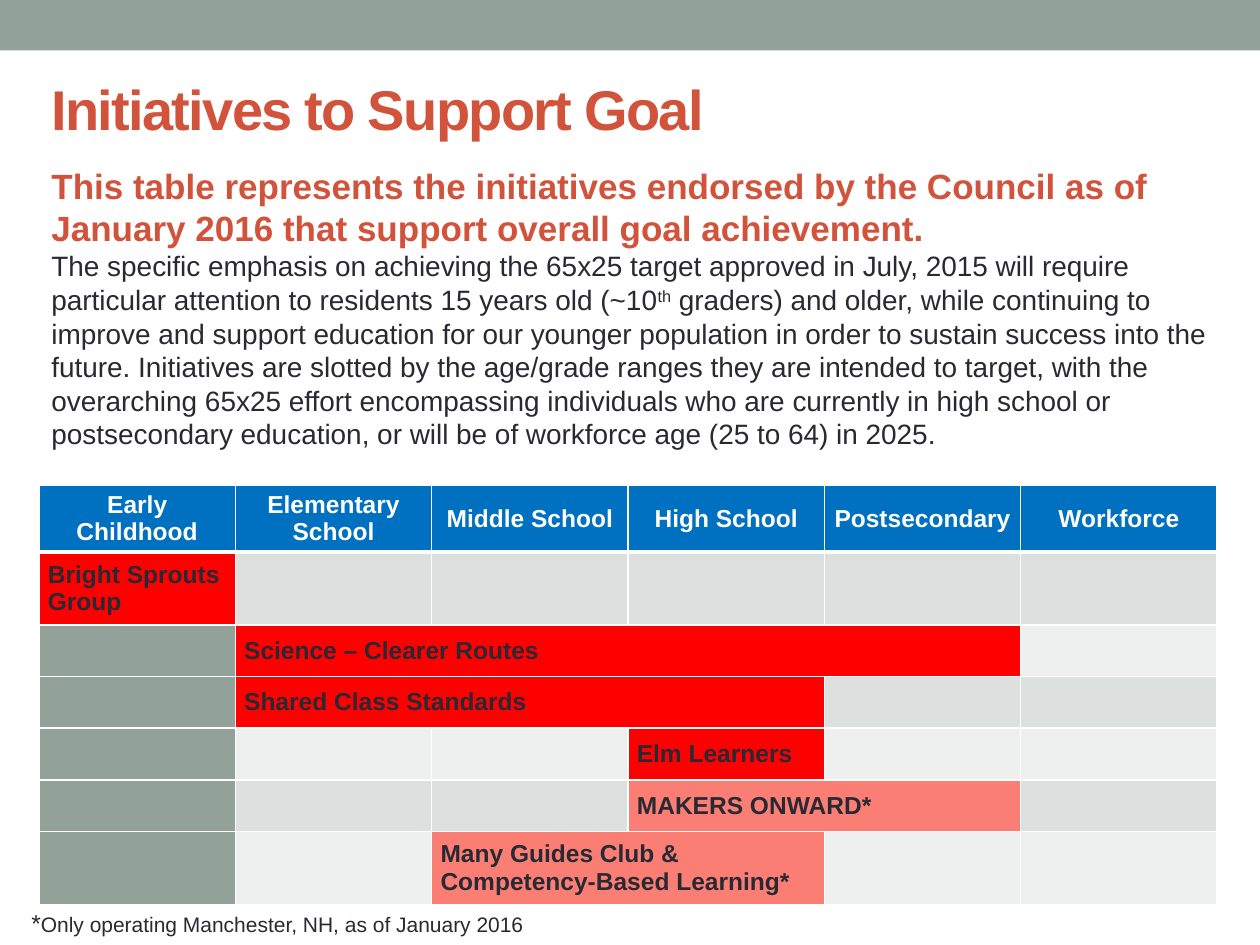
from lxml import etree
from pptx import Presentation, util as u
from pptx.dml.color import RGBColor
from pptx.enum import shapes, text
from pptx.oxml.ns import qn

COLORS = {
    "sage": "93A299", "rust": "D2533C", "ink": "292934", "white": "FFFFFF",
    "header": "0070C0", "statewide": "FF0000", "local": "FA7E74",
    "odd": "DCE0DE", "even": "EEF0EF",
}
TITLE = "Initiatives to Support Goal"
SUMMARY = ("This table represents the initiatives endorsed by the Council as of "
           "January 2016 that support overall goal achievement. ")
DETAIL_START = ("The specific emphasis on achieving the 65x25 target approved in July, 2015 "
                "will require particular attention to residents 15 years old (~10")
DETAIL_END = (" graders) and older, while continuing to improve and support education for our "
              "younger population in order to sustain success into the future. Initiatives are "
              "slotted by the age/grade ranges they are intended to target, with the overarching "
              "65x25 effort encompassing individuals who are currently in high school or "
              "postsecondary education, or will be of workforce age (25 to 64) in 2025.")
STAGES = ["Early Childhood", "Elementary School", "Middle School",
          "High School", "Postsecondary", "Workforce"]
INITIATIVES = [
    ("Bright Sprouts Group", 0, 1, "statewide"),
    ("Science – Clearer Routes", 1, 4, "statewide"),
    ("Shared Class Standards", 1, 3, "statewide"),
    ("Elm Learners", 3, 1, "statewide"),
    ("MAKERS ONWARD*", 3, 2, "local"),
    ("Many Guides Club & Competency-Based Learning*", 2, 2, "local"),
]
ROW_HEIGHTS = [0.53, 0.58, 0.41, 0.41, 0.41, 0.41, 0.58]
TABLE_BOX = [0.31, 3.85, 9.35, 3.34]
CELL_FORMAT = {"margin_left": u.Inches(0.07), "margin_right": u.Inches(0.07),
               "margin_top": 0, "margin_bottom": 0,
               "vertical_anchor": text.MSO_ANCHOR.MIDDLE}


def rgb(name):
    return RGBColor.from_string(COLORS[name])


def add_run(paragraph, words, size, color, bold=False):
    run = paragraph.add_run()
    run.text = words
    for name, value in {"name": "Arial", "size": u.Pt(size), "bold": bold}.items():
        setattr(run.font, name, value)
    run.font.color.rgb = rgb(color)
    return run


def add_text_box(slide, box):
    frame = slide.shapes.add_textbox(*map(u.Inches, box)).text_frame
    frame.word_wrap = True
    return frame.paragraphs[0]


def fill_cell(cell, color):
    cell.fill.solid()
    cell.fill.fore_color.rgb = rgb(color)


def set_borders(cell, bottom_width):
    properties = cell._tc.get_or_add_tcPr()
    widths = {"lnL": 1, "lnR": 1, "lnT": 1, "lnB": bottom_width}
    for position, (side, width) in enumerate(widths.items()):
        line = etree.Element(qn(f"a:{side}"), w=str(u.Pt(width)))
        solid = etree.SubElement(line, qn("a:solidFill"))
        etree.SubElement(solid, qn("a:srgbClr"), val=COLORS["white"])
        properties.insert(position, line)


def write_cell(cell, words, color, alignment):
    paragraph = cell.text_frame.paragraphs[0]
    paragraph.alignment = alignment
    add_run(paragraph, words, 14, color, True)


def add_initiative_table(slide):
    table = slide.shapes.add_table(len(ROW_HEIGHTS), len(STAGES),
                                   *map(u.Inches, TABLE_BOX)).table
    for row, height in zip(table.rows, ROW_HEIGHTS):
        row.height = u.Inches(height)
    for row_index in range(len(ROW_HEIGHTS)):
        for column in range(len(STAGES)):
            cell = table.cell(row_index, column)
            for name, value in CELL_FORMAT.items():
                setattr(cell, name, value)
            if row_index == 0:
                color = "header"
            elif column == 0:
                color = "sage"
            else:
                color = "odd" if row_index % 2 else "even"
            fill_cell(cell, color)
            set_borders(cell, 3 if row_index == 0 else 1)
    for column, stage in enumerate(STAGES):
        write_cell(table.cell(0, column), stage, "white", text.PP_ALIGN.CENTER)
    for row_index, (name, start, span, color) in enumerate(INITIATIVES, 1):
        cell = table.cell(row_index, start)
        if span > 1:
            cell.merge(table.cell(row_index, start + span - 1))
        fill_cell(cell, color)
        write_cell(cell, name, "ink", text.PP_ALIGN.LEFT)


def main():
    presentation = Presentation()
    presentation.slide_width, presentation.slide_height = u.Inches(10), u.Inches(7.5)
    slide = presentation.slides.add_slide(presentation.slide_layouts[6])

    band = slide.shapes.add_shape(shapes.MSO_SHAPE.RECTANGLE, 0, 0, u.Inches(10), u.Inches(0.4))
    band.shadow.inherit = False
    band.fill.solid()
    band.fill.fore_color.rgb = rgb("sage")
    band.line.fill.background()

    title = add_run(add_text_box(slide, [0.31, 0.54, 9.08, 1.08]), TITLE, 32, "rust", True)
    title.font._element.set("spc", "-100")

    body = add_text_box(slide, [0.31, 1.26, 9.6, 5.81])
    add_run(body, SUMMARY, 20, "rust", True)
    body.add_line_break()
    add_run(body, DETAIL_START, 16, "ink")
    add_run(body, "th", 16, "ink").font._element.set("baseline", "30000")
    add_run(body, DETAIL_END, 16, "ink")

    add_initiative_table(slide)

    footnote = add_text_box(slide, [0.15, 7.16, 5.16, 0.34])
    add_run(footnote, "*", 14, "ink")
    add_run(footnote, "Only operating Manchester, NH, as of January 2016", 12, "ink")
    presentation.save("out.pptx")


if __name__ == "__main__":
    main()
